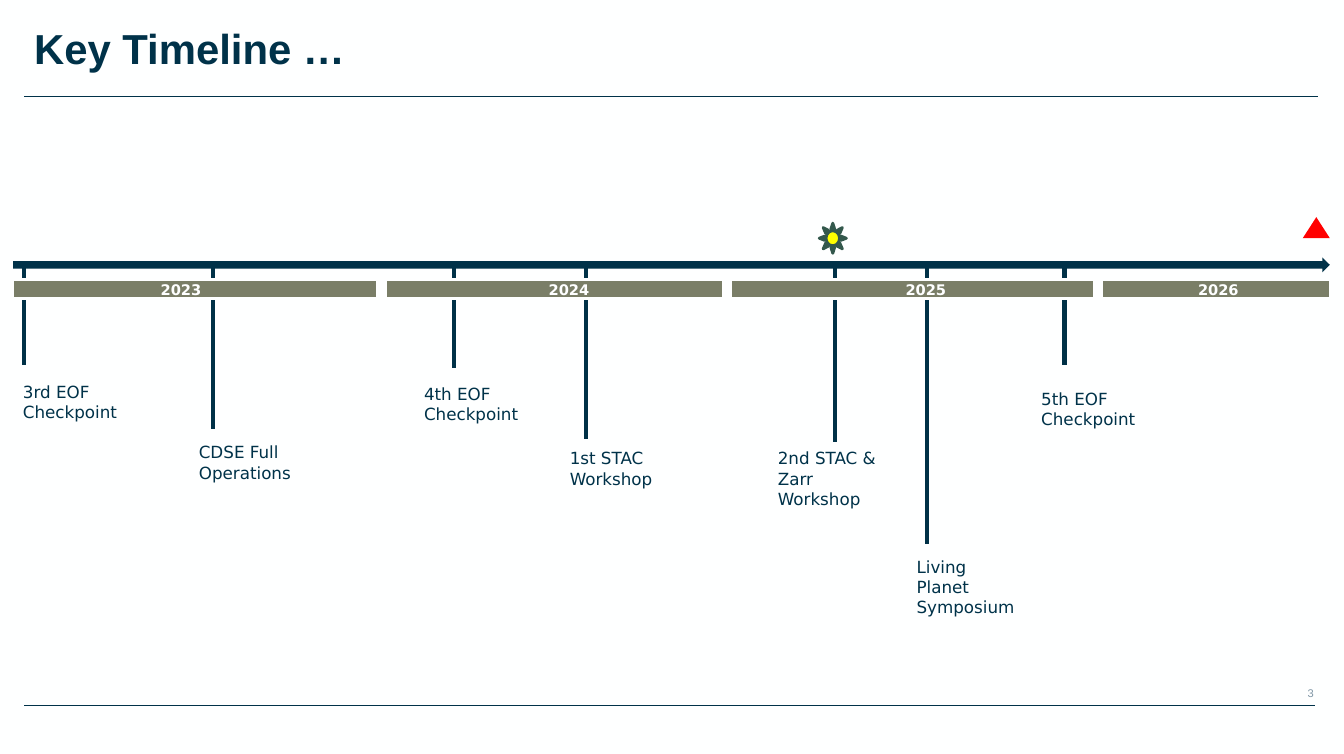
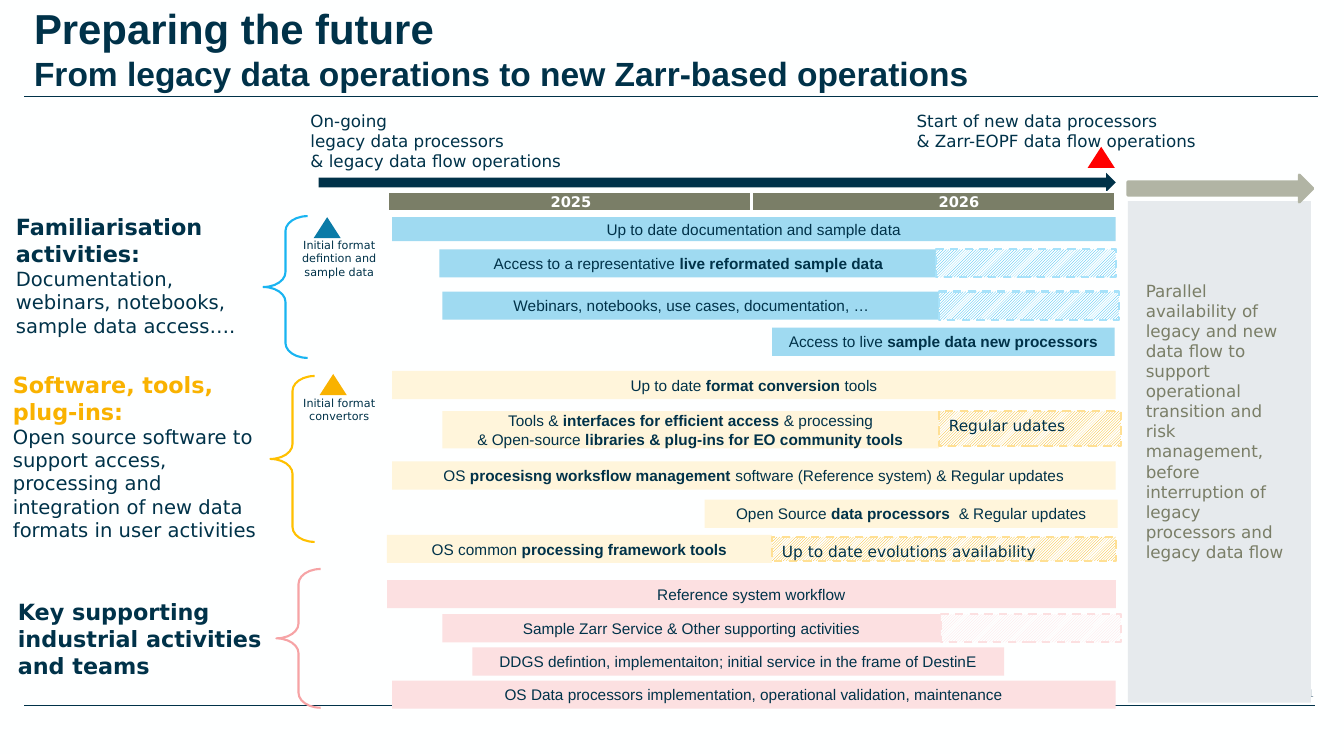
from dataclasses import dataclass

from lxml.etree import SubElement
from pptx import Presentation
from pptx.dml.color import RGBColor
from pptx.enum.dml import MSO_LINE, MSO_PATTERN
from pptx.enum.shapes import MSO_CONNECTOR, MSO_SHAPE as Preset
from pptx.enum.text import MSO_ANCHOR as Anchor, PP_ALIGN as Align
from pptx.oxml.ns import qn
from pptx.shapes.autoshape import Shape
from pptx.slide import Slide
from pptx.text.text import TextFrame
from pptx.util import Inches, Pt

NAVY, STEM, WHITE = "003249", "003147", "FEFFFF"
OLIVE, SAGE, PANEL, PAGE = "7A7E67", "B1B4A4", "E6EAED", "8197A6"
RED, YELLOW, SUN_EDGE = "FF0000", "FFFF00", "33584C"
SANS, ARIAL = "DejaVu Sans", "Arial"


@dataclass
class Year:
    name: str
    left: float
    width: float
    label_left: float


@dataclass
class Milestone:
    label: str
    stem: float
    stem_end: float
    label_left: float
    label_top: float


@dataclass
class Bar:
    left: float
    top: float
    width: float
    text: str = ""
    height: float = 0.28


@dataclass
class Theme:
    """One group of activities: heading, brace, solid bars and hatched extensions."""
    heading: str
    heading_color: str
    detail: str
    heading_box: tuple[float, float, float, float]
    brace_box: tuple[float, float, float, float]
    brace_color: str
    bar_color: str
    hatch_color: str
    hatch_edge: str
    bars: list[Bar]
    extensions: list[Bar]


@dataclass
class Marker:
    label: str
    color: str
    left: float
    top: float
    label_top: float


MILESTONES = [
    Milestone("3rd EOF\nCheckpoint", 0.24, 3.63, 0.13, 3.75),
    Milestone("CDSE Full\nOperations", 2.12, 4.27, 1.88, 4.35),
    Milestone("4th EOF\nCheckpoint", 4.52, 3.66, 4.12, 3.77),
    Milestone("1st STAC\nWorkshop", 5.83, 4.37, 5.57, 4.41),
    Milestone("2nd STAC & Zarr\nWorkshop", 8.31, 4.4, 7.64, 4.41),
    Milestone("Living Planet\nSymposium", 9.22, 5.41, 9.02, 5.49),
    Milestone("5th EOF\nCheckpoint", 10.59, 3.63, 10.26, 3.82),
]
TIMELINE_YEARS = [
    Year("2023", 0.13, 3.62, 1.5),
    Year("2024", 3.84, 3.36, 5.36),
    Year("2025", 7.27, 3.62, 8.91),
    Year("2026", 10.96, 2.28, 11.82),
]
ROADMAP_YEARS = [Year("2025", 3.86, 3.62, 5.38), Year("2026", 7.48, 3.62, 9.24)]

THEMES = [
    Theme("Familiarisation activities:", NAVY,
          "Documentation, webinars, notebooks, sample data access….",
          (0.06, 2.07, 2.48, 1.35), (2.62, 2.15, 0.44, 1.41),
          "19B4F1", "9FDAF1", "19B4F1", "A7E2FA",
          [Bar(3.9, 2.16, 7.2, "Up to date documentation and sample data", 0.24),
           Bar(4.37, 2.48, 4.96, "Access to a representative **live reformated sample data**"),
           Bar(4.4, 2.9, 4.96, "Webinars, notebooks, use cases, documentation, …"),
           Bar(7.68, 3.26, 3.41, "Access to live **sample data new processors**")],
          [Bar(9.31, 2.48, 1.79), Bar(9.34, 2.9, 1.79)]),
    Theme("Software, tools, plug-ins:", "F9B200",
          "Open source software to support access, processing and integration "
          "of new data formats in user activities",
          (0.03, 3.64, 2.75, 1.82), (2.69, 3.74, 0.44, 1.65),
          "FFC000", "FFF5DB", "F9B200", "FFE094",
          [Bar(3.9, 3.69, 7.2, "Up to date **format conversion **tools"),
           Bar(4.4, 4.09, 4.94, "Tools & **interfaces for efficient access **& processing\n"
               "& Open-source **libraries & plug-ins for EO community tools**", 0.37),
           Bar(3.9, 4.59, 7.2, "OS **procesisng worksflow management **software "
               "(Reference system) & Regular updates"),
           Bar(7.01, 4.97, 4.11, "Open Source **data processors  **& Regular updates"),
           Bar(3.85, 5.32, 3.83, "OS common **processing framework tools**")],
          [Bar(9.34, 4.09, 1.81, "Regular udates", 0.35),
           Bar(7.68, 5.34, 3.42, "Up to date evolutions availability", 0.24)]),
    Theme("Key supporting\nindustrial activities and teams", NAVY, "",
          (0.08, 5.9, 3.06, 0.91), (2.75, 5.66, 0.44, 1.38),
          "F6A3A5", "FCE0E1", "FCE0E1", "FCE0E1",
          [Bar(3.85, 5.77, 7.25, "Reference system workflow"),
           Bar(4.4, 6.11, 4.96, "Sample Zarr Service & Other supporting activities"),
           Bar(4.7, 6.44, 5.29, "DDGS defintion, implementaiton; initial service "
               "in the frame of DestinE"),
           Bar(3.9, 6.77, 7.2, "OS Data processors implementation, operational "
               "validation, maintenance")],
          [Bar(9.36, 6.11, 1.79)]),
]
MARKERS = [
    Marker("Initial format defintion and sample data", "0A7BA7", 3.12, 2.16, 2.32),
    Marker("Initial format convertors", "F9B200", 3.18, 3.72, 3.89),
]


def rgb(color: str) -> RGBColor:
    return RGBColor.from_string(color)


def write(frame: TextFrame, text: str, *, size: float = 12, color: str = NAVY,
          bold: bool = False, font: str = SANS, align: Align = Align.LEFT,
          anchor: Anchor = Anchor.TOP, wrap: bool = True) -> None:
    """Append one paragraph per line; **marks** switch to bold."""
    frame.word_wrap, frame.vertical_anchor = wrap, anchor
    for line in text.split("\n"):
        first = frame.paragraphs[0]
        paragraph = frame.add_paragraph() if first.runs else first
        paragraph.alignment = align
        for index, part in enumerate(line.split("**")):
            if part:
                run = paragraph.add_run()
                run.text = part
                run.font.name, run.font.size = font, Pt(size)
                run.font.bold = bold or index % 2 == 1
                run.font.color.rgb = rgb(color)


def add_text(slide: Slide, left: float, top: float, width: float, height: float,
             text: str, **text_format) -> TextFrame:
    box = slide.shapes.add_textbox(Inches(left), Inches(top), Inches(width), Inches(height))
    write(box.text_frame, text, **text_format)
    return box.text_frame


def add_preset(slide: Slide, preset: Preset, left: float, top: float, width: float,
               height: float, fill: str | None = None, edge: str | None = None,
               edge_width: float = 2) -> Shape:
    shape = slide.shapes.add_shape(preset, Inches(left), Inches(top),
                                   Inches(width), Inches(height))
    shape.shadow.inherit = False
    if fill:
        shape.fill.solid()
        shape.fill.fore_color.rgb = rgb(fill)
    else:
        shape.fill.background()
    if edge:
        shape.line.color.rgb = rgb(edge)
        shape.line.width = Pt(edge_width)
    else:
        shape.line.fill.background()
    return shape


def add_line(slide: Slide, x1: float, y1: float, x2: float, y2: float,
             color: str = NAVY, width: float = 0.75) -> None:
    line = slide.shapes.add_connector(MSO_CONNECTOR.STRAIGHT, Inches(x1), Inches(y1),
                                      Inches(x2), Inches(y2))
    line.line.color.rgb = rgb(color)
    line.line.width = Pt(width)
    SubElement(line._element.spPr, qn("a:effectLst"))


def add_slide(deck: Presentation, title: str, page: str, subtitle: str = "") -> Slide:
    """Start a slide with its background, title, rules and page number."""
    slide = deck.slides.add_slide(deck.slide_layouts[6])
    slide.background.fill.solid()
    slide.background.fill.fore_color.rgb = rgb(WHITE)
    number = add_text(slide, 8.97, 6.78, 4.1, 0.24, page, size=8, color=PAGE,
                      font=ARIAL, align=Align.RIGHT)
    number.margin_right = 0
    add_line(slide, 0.24, 7.02, 13.08, 7.02)
    add_line(slide, 0.24, 0.96, 13.11, 0.96)
    heading = {"bold": True, "font": ARIAL, "anchor": Anchor.MIDDLE}
    frame = add_text(slide, 0.24, 0, 12.09, 0.96, title, size=30, **heading)
    if subtitle:
        write(frame, subtitle, size=24, **heading)
    return slide


def add_years(slide: Slide, years: list[Year], top: float) -> None:
    for year in years:
        add_preset(slide, Preset.RECTANGLE, year.left, top, year.width, 0.19, OLIVE, WHITE)
        add_text(slide, year.label_left, top - 0.04, 0.62, 0.28, year.name,
                 size=10.5, color=WHITE, bold=True, wrap=False)


def add_triangle(slide: Slide, left: float, top: float, color: str) -> None:
    add_preset(slide, Preset.ISOSCELES_TRIANGLE, left, top, 0.27, 0.21, color)


def add_theme(slide: Slide, theme: Theme) -> None:
    frame = add_text(slide, *theme.heading_box, theme.heading, size=16,
                     color=theme.heading_color, bold=True)
    if theme.detail:
        write(frame, theme.detail, size=14)
    for bar in theme.bars:
        shape = add_preset(slide, Preset.RECTANGLE, bar.left, bar.top, bar.width,
                           bar.height, theme.bar_color)
        write(shape.text_frame, bar.text, size=11, font=ARIAL, align=Align.CENTER,
              anchor=Anchor.MIDDLE)
    for bar in theme.extensions:
        shape = add_preset(slide, Preset.RECTANGLE, bar.left, bar.top, bar.width,
                           bar.height, edge=theme.hatch_edge, edge_width=1.5)
        shape.line.dash_style = MSO_LINE.DASH
        shape.fill.patterned()
        shape.fill.pattern = MSO_PATTERN.LIGHT_UPWARD_DIAGONAL
        shape.fill.fore_color.rgb = rgb(theme.hatch_color)
        shape.fill.back_color.rgb = rgb(WHITE)
        if bar.text:
            write(shape.text_frame, bar.text, size=11)
    brace = add_preset(slide, Preset.LEFT_BRACE, *theme.brace_box,
                       edge=theme.brace_color, edge_width=1.5)
    brace.adjustments[0] = 0.337


def add_timeline(deck: Presentation) -> None:
    slide = add_slide(deck, "Key Timeline …", "3")
    for milestone in MILESTONES:
        add_line(slide, milestone.stem, 2.65, milestone.stem, milestone.stem_end, STEM, 3)
        add_text(slide, milestone.label_left, milestone.label_top, 1.24, 0.5, milestone.label)
    add_preset(slide, Preset.RIGHT_ARROW, 0.13, 2.56, 13.1, 0.15, NAVY)
    add_years(slide, TIMELINE_YEARS, 2.78)
    add_triangle(slide, 12.96, 2.16, RED)
    add_preset(slide, Preset.SUN, 8.15, 2.22, 0.27, 0.3, YELLOW, SUN_EDGE)


def add_roadmap(deck: Presentation) -> None:
    slide = add_slide(deck, "Preparing the future", "11",
                      "From legacy data operations to new Zarr-based operations")
    add_preset(slide, Preset.RECTANGLE, 11.22, 2, 1.82, 4.99, PANEL)
    add_preset(slide, Preset.RIGHT_ARROW, 3.17, 1.72, 7.93, 0.19, NAVY)
    add_preset(slide, Preset.RIGHT_ARROW, 11.22, 1.74, 1.84, 0.27, SAGE, SAGE)
    add_text(slide, 2.99, 1.05, 3.42, 0.71,
             "On-going\nlegacy data processors\n& legacy data flow operations")
    add_text(slide, 9.02, 1.05, 3.61, 0.5,
             "Start of new data processors\n& Zarr-EOPF data flow operations")
    add_years(slide, ROADMAP_YEARS, 1.91)
    add_triangle(slide, 10.82, 1.46, RED)
    add_text(slide, 11.3, 2.74, 1.64, 2.93,
             "Parallel availability of legacy and new data flow to support operational "
             "transition and risk management, before interruption of legacy processors "
             "and legacy data flow", color=OLIVE)
    for theme in THEMES:
        add_theme(slide, theme)
    for marker in MARKERS:
        add_triangle(slide, marker.left, marker.top, marker.color)
        add_text(slide, 2.72, marker.label_top, 1.31, 0.4, marker.label, size=8,
                 align=Align.CENTER)


def main() -> None:
    deck = Presentation()
    deck.slide_width, deck.slide_height = Inches(13.37), Inches(7.5)
    add_timeline(deck)
    add_roadmap(deck)
    deck.save("out.pptx")


if __name__ == "__main__":
    main()
